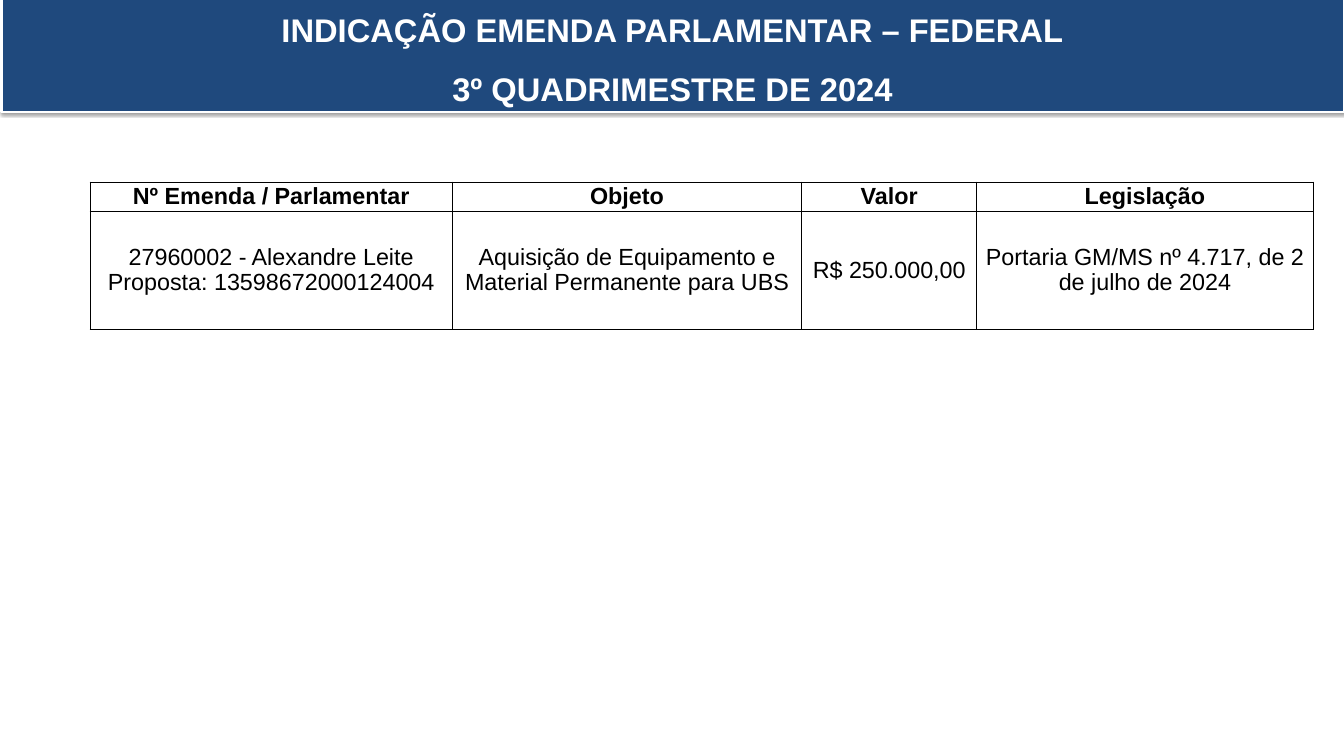
from lxml import etree
from pptx import Presentation
from pptx import util as u
from pptx.dml import color
from pptx.enum import text
from pptx.oxml import ns

TITLE = "INDICAÇÃO EMENDA PARLAMENTAR – FEDERAL\n3º QUADRIMESTRE DE 2024"
ROWS = [
    ["Nº Emenda / Parlamentar", "Objeto", "Valor", "Legislação"],
    ["27960002 - Alexandre Leite\nProposta: 13598672000124004",
     "Aquisição de Equipamento e Material Permanente para UBS",
     "R$ 250.000,00",
     "Portaria GM/MS nº 4.717, de 2 de julho de 2024"],
]
WIDTHS = [388, 374.5, 187.5, 360.5]
HEIGHTS = [31, 126.5]


def rgb(code):
    return color.RGBColor.from_string(code)


def node(parent, tag, **attrs):
    item = etree.SubElement(parent, ns.qn(tag))
    for key, value in attrs.items():
        item.set(key, str(value))
    return item


class Deck:
    font = "Arial"
    navy, white, black = "1F497D", "FFFFFF", "000000"

    def __init__(self, width, height):
        self.prs = Presentation()
        self.prs.slide_width, self.prs.slide_height = u.Pt(width), u.Pt(height)
        self.slide = self.prs.slides.add_slide(self.prs.slide_layouts[5])

    def style(self, frame, size, tone, bold, space=1):
        for para in frame.paragraphs:
            para.alignment = text.PP_ALIGN.CENTER
            para.line_spacing = space
            for run in para.runs:
                run.font.name, run.font.size = self.font, u.Pt(size)
                run.font.bold = bold
                run.font.color.rgb = rgb(tone)

    def shade(self, shape):
        effects = node(shape.element.spPr, "a:effectLst")
        shadow = node(effects, "a:outerShdw", blurRad=u.Pt(3.1),
                      dist=u.Pt(1.6), dir=90 * 60000, rotWithShape=0)
        tone = node(shadow, "a:srgbClr", val=self.black)
        node(tone, "a:alpha", val=38000)

    def title(self, words, left, top, width, height):
        band = self.slide.shapes.title
        band.left, band.top = u.Pt(left), u.Pt(top)
        band.width, band.height = u.Pt(width), u.Pt(height)
        band.fill.solid()
        band.fill.fore_color.rgb = rgb(self.navy)
        band.line.color.rgb = rgb(self.white)
        band.line.width = u.Pt(3)
        self.shade(band)
        frame = band.text_frame
        frame.text = words
        frame.word_wrap = True
        frame.auto_size = text.MSO_AUTO_SIZE.NONE
        frame.vertical_anchor = text.MSO_ANCHOR.MIDDLE
        self.style(frame, 35, self.white, True, 1.5)

    def border(self, cell):
        props = cell._tc.get_or_add_tcPr()
        for side in "LRTB":
            line = node(props, f"a:ln{side}", w=u.Pt(1))
            node(node(line, "a:solidFill"), "a:srgbClr", val=self.black)

    def table(self, rows, left, top, widths, heights):
        grid = self.slide.shapes.add_table(
            len(rows), len(widths), u.Pt(left), u.Pt(top),
            u.Pt(sum(widths)), u.Pt(sum(heights))).table
        grid.first_row = grid.horz_banding = False
        for col, width in zip(grid.columns, widths):
            col.width = u.Pt(width)
        for i, (row, height) in enumerate(zip(rows, heights)):
            grid.rows[i].height = u.Pt(height)
            for j, words in enumerate(row):
                cell = grid.cell(i, j)
                cell.text_frame.text = words
                cell.margin_left = cell.margin_right = u.Pt(3.6)
                cell.margin_top = cell.margin_bottom = 0
                cell.vertical_anchor = text.MSO_ANCHOR.MIDDLE
                self.border(cell)
                cell.fill.background()
                self.style(cell.text_frame, 25, self.black, i == 0)


def main():
    deck = Deck(1440, 810)
    # Heading band
    deck.title(TITLE, 1.5, -14.5, 1438.5, 134.5)
    # Amendments table
    deck.table(ROWS, 96.5, 195, WIDTHS, HEIGHTS)
    deck.prs.save("out.pptx")


if __name__ == "__main__":
    main()
